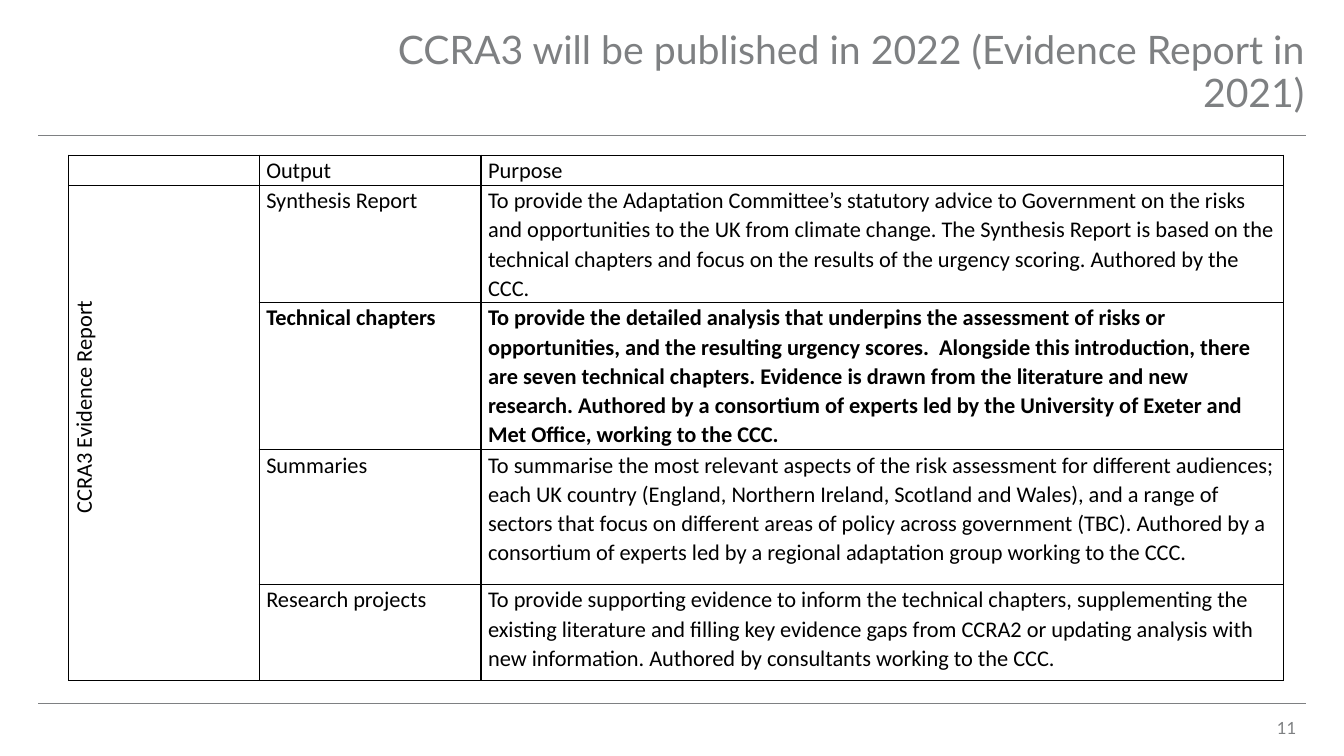
from lxml import etree
from pptx import Presentation
from pptx.dml.color import RGBColor
from pptx.enum.shapes import MSO_CONNECTOR
from pptx.enum.text import MSO_ANCHOR, PP_ALIGN
from pptx.oxml.ns import qn
from pptx.util import Cm, Pt

STRAIGHT = MSO_CONNECTOR.STRAIGHT
MIDDLE = MSO_ANCHOR.MIDDLE
LEFT, CENTER, RIGHT = PP_ALIGN.LEFT, PP_ALIGN.CENTER, PP_ALIGN.RIGHT

COLUMN_WIDTHS = [4.8, 5.59, 20.22]
ROW_HEIGHTS = [0.76, 2.95, 3.71, 3.4, 2.42]
SIDE_LABEL = "CCRA3 Evidence Report"
BOLD_ROW = 2
OUTPUTS = [
    ("Output", "Purpose"),
    ("Synthesis Report",
     "To provide the Adaptation Committee’s statutory advice to Government on the risks and "
     "opportunities to the UK from climate change. The Synthesis Report is based on the "
     "technical chapters and focus on the results of the urgency scoring. Authored by the CCC."),
    ("Technical chapters",
     "To provide the detailed analysis that underpins the assessment of risks or opportunities, "
     "and the resulting urgency scores.  Alongside this introduction, there are seven technical "
     "chapters. Evidence is drawn from the literature and new research. Authored by a consortium "
     "of experts led by the University of Exeter and Met Office, working to the CCC."),
    ("Summaries",
     "To summarise the most relevant aspects of the risk assessment for different audiences; each "
     "UK country (England, Northern Ireland, Scotland and Wales), and a range of sectors that "
     "focus on different areas of policy across government (TBC). Authored by a consortium of "
     "experts led by a regional adaptation group working to the CCC."),
    ("Research projects",
     "To provide supporting evidence to inform the technical chapters, supplementing the existing "
     "literature and filling key evidence gaps from CCRA2 or updating analysis with new "
     "information. Authored by consultants working to the CCC."),
]


def color(value):
    return RGBColor.from_string(value)


def set_all(target, values):
    for name, value in values.items():
        setattr(target, name, value)


class SlideBuilder:
    grey = "7E8082"
    black = "000000"
    heading_font = "Lato"
    table_font = "Calibri"

    def __init__(self, page):
        self.page = page

    def fill_text(self, frame, text, ink, paragraph_format, font_format):
        para = frame.paragraphs[0]
        span = para.add_run()
        span.text = text
        set_all(para, paragraph_format)
        set_all(span.font, font_format)
        span.font.color.rgb = color(ink)

    def rule(self, top):
        line = self.page.shapes.add_connector(STRAIGHT, Cm(0.97), Cm(top), Cm(32.92), Cm(top))
        line.line.color.rgb = color(self.grey)
        line.line.width = Pt(0.5)
        etree.SubElement(line._element.spPr, qn("a:effectLst"))

    def heading(self, text, left, top, width, height, size):
        box = self.page.shapes.add_textbox(Cm(left), Cm(top), Cm(width), Cm(height))
        set_all(box.text_frame, {"word_wrap": True, "vertical_anchor": MIDDLE})
        self.fill_text(box.text_frame, text, self.grey,
                       {"alignment": RIGHT, "line_spacing": 0.9},
                       {"size": Pt(size), "name": self.heading_font})

    def table(self, left, top):
        frame = self.page.shapes.add_table(
            len(ROW_HEIGHTS), len(COLUMN_WIDTHS), Cm(left), Cm(top),
            Cm(sum(COLUMN_WIDTHS)), Cm(sum(ROW_HEIGHTS)))
        table = frame.table
        set_all(table, {"first_row": False, "horz_banding": False})
        for column, width in zip(table.columns, COLUMN_WIDTHS):
            column.width = Cm(width)
        for row, height in zip(table.rows, ROW_HEIGHTS):
            row.height = Cm(height)
        for cell in table.iter_cells():
            self.style_cell(cell)
        return table

    def style_cell(self, cell):
        set_all(cell, {"margin_left": Cm(0.18), "margin_right": Cm(0.18),
                       "margin_top": 0, "margin_bottom": 0})
        properties = cell._tc.get_or_add_tcPr()
        for side in ("lnL", "lnR", "lnT", "lnB"):
            border = etree.SubElement(properties, qn(f"a:{side}"), w=str(Pt(1)))
            fill = etree.SubElement(border, qn("a:solidFill"))
            etree.SubElement(fill, qn("a:srgbClr"), val=self.black)
        cell.fill.background()

    def cell_text(self, cell, text, bold=False, alignment=LEFT):
        self.fill_text(cell.text_frame, text, self.black,
                       {"alignment": alignment, "line_spacing": 1.07},
                       {"size": Pt(16), "name": self.table_font, "bold": bold})

    def side_label(self, table, text):
        """Merge the first column below the header and turn its text upwards."""
        cell = table.cell(1, 0)
        cell.merge(table.cell(len(ROW_HEIGHTS) - 1, 0))
        cell._tc.get_or_add_tcPr().set("vert", "vert270")
        cell.margin_left = Cm(1.5)
        self.cell_text(cell, text, alignment=CENTER)


def main():
    deck = Presentation()
    set_all(deck, {"slide_width": Cm(33.87), "slide_height": Cm(19.05)})
    builder = SlideBuilder(deck.slides.add_slide(deck.slide_layouts[6]))
    for top in (3.4, 17.73):
        builder.rule(top)
    builder.heading("CCRA3 will be published in 2022 (Evidence Report in 2021)",
                    9.32, 0.56, 23.8, 2.57, 28)
    builder.heading("11", 31.12, 17.96, 1.8, 0.84, 12)
    table = builder.table(1.73, 3.91)
    for row, texts in enumerate(OUTPUTS):
        for column, text in enumerate(texts, start=1):
            builder.cell_text(table.cell(row, column), text, bold=row == BOLD_ROW)
    builder.side_label(table, SIDE_LABEL)
    deck.save("out.pptx")


if __name__ == "__main__":
    main()
